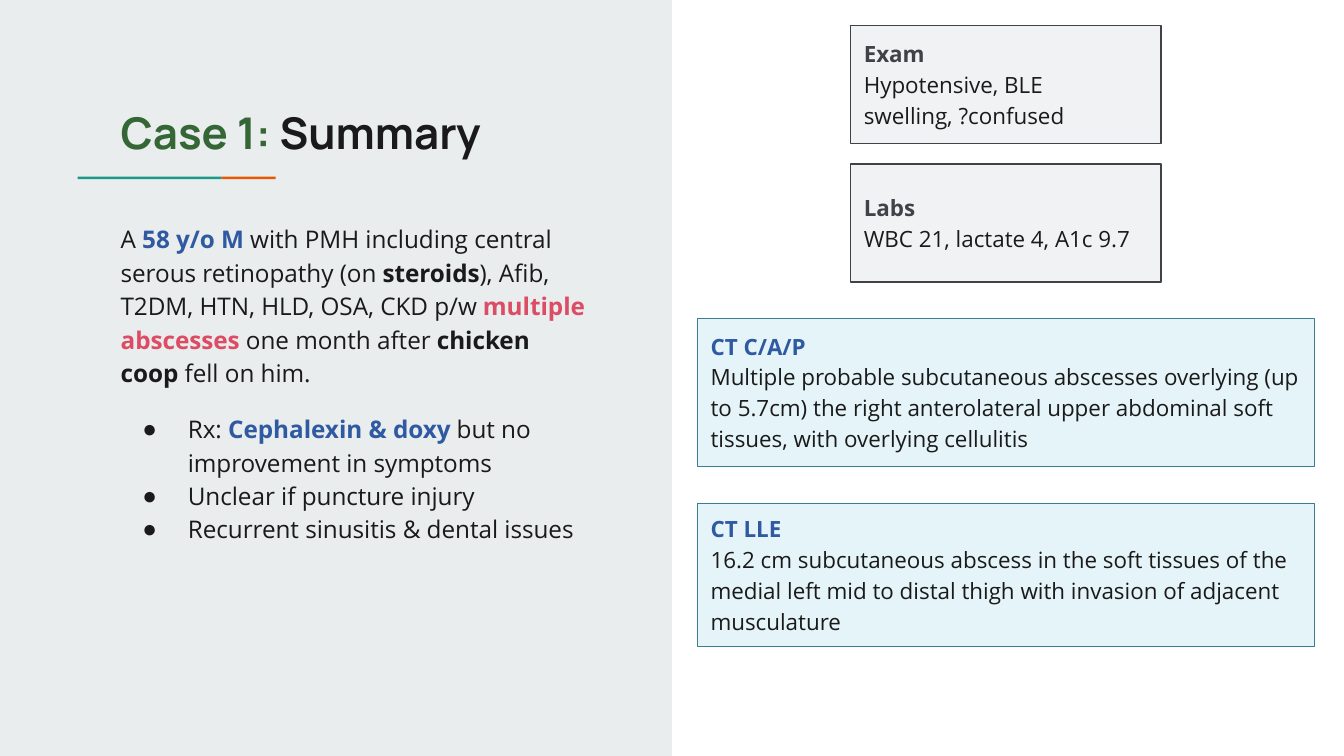
from lxml.etree import SubElement
from pptx import Presentation
from pptx.dml.color import RGBColor
from pptx.enum.shapes import MSO_SHAPE as Geo
from pptx.enum.text import MSO_ANCHOR as Anchor, MSO_AUTO_SIZE as Fit, PP_ALIGN as Align
from pptx.oxml.ns import qn
from pptx.util import Cm, Pt

INK, BLUE, GRAY = "1A1A1A", "2F5AA2", "404247"
GREEN, RED = "356635", "DC4C64"
PAD = Cm(0.25)

STORY = [
    ("A ",), ("58 y/o M", BLUE),
    (" with PMH including central serous retinopathy (on ",),
    ("steroids", INK), ("), Afib, T2DM, HTN, HLD, OSA, CKD p/w ",),
    ("multiple abscesses ", RED), ("one month after ",),
    ("chicken coop ", INK), ("fell on him.",),
]
POINTS = [
    [("Rx: ",), ("Cephalexin & doxy", BLUE), (" but no improvement in symptoms",)],
    [("Unclear if puncture injury",)],
    [("Recurrent sinusitis & dental issues",)],
]
FINDS = [
    ("Exam", "Hypotensive, BLE swelling, ?confused"),
    ("Labs", "WBC 21, lactate 4, A1c 9.7"),
]
SCANS = [
    ("CT C/A/P", "Multiple probable subcutaneous abscesses overlying (up to 5.7cm) "
     "the right anterolateral upper abdominal soft tissues, with overlying cellulitis", 2.8),
    ("CT LLE", "16.2 cm subcutaneous abscess in the soft tissues of the medial left mid "
     "to distal thigh with invasion of adjacent musculature", 2.7),
]


def rgb(code):
    return RGBColor.from_string(code)


def place(shape, x, y, w, h):
    shape.left, shape.top, shape.width, shape.height = Cm(x), Cm(y), Cm(w), Cm(h)


def frame(shape, anchor):
    """Set up the shape's text frame and return it."""
    tf = shape.text_frame
    tf.margin_left = tf.margin_right = tf.margin_top = tf.margin_bottom = PAD
    tf.word_wrap, tf.auto_size, tf.vertical_anchor = True, Fit.NONE, anchor
    return tf


def style(para, name, size, color=INK, bold=False):
    font = para.font
    font.name, font.size, font.bold = name, Pt(size), bold
    font.color.rgb = rgb(color)


def write(para, parts):
    """Add runs; a part that names a colour is bold in it."""
    for text, *color in parts:
        run = para.add_run()
        run.text = text
        if color:
            run.font.bold = True
            run.font.color.rgb = rgb(color[0])


def bullet(para, on):
    props = para._p.get_or_add_pPr()
    props.set("marL", str(Cm(1.27) if on else 0))
    props.set("indent", str(Cm(-0.86) if on else 0))
    if on:
        tint = SubElement(props, qn("a:buClr"))
        SubElement(tint, qn("a:srgbClr"), val=INK)
        SubElement(props, qn("a:buChar"), char="●")
    else:
        SubElement(props, qn("a:buNone"))


def block(slide, x, y, w, h, fill, line=None):
    box = slide.shapes.add_shape(Geo.RECTANGLE, Cm(x), Cm(y), Cm(w), Cm(h))
    box.shadow.inherit = False
    box.fill.solid()
    box.fill.fore_color.rgb = rgb(fill)
    if line:
        box.line.color.rgb = rgb(line)
        box.line.width = Pt(0.75)
    else:
        box.line.fill.background()
    return box


def card(slide, x, y, w, h, head, text, fill, line, color):
    tf = frame(block(slide, x, y, w, h, fill, line), Anchor.MIDDLE)
    top, body = tf.paragraphs[0], tf.add_paragraph()
    top.text, body.text = head, text
    top.alignment = body.alignment = Align.LEFT
    body.line_spacing = 1.15
    style(top, "Open Sans", 12, color, True)
    style(body, "Open Sans", 12)


def backdrop(slide, x, y, w, h):
    """Tinted panel with the two-colour rule under the title."""
    panel = block(slide, x, y, w, h, "E9EDEE")
    rules = [block(slide, x + 1.47, y + 3.34, 2.72, 0.05, "1A9988"),
             block(slide, x + 4.19, y + 3.34, 1.02, 0.05, "EB5600")]
    tree = slide.shapes._spTree
    for spot, shape in enumerate([panel] + rules, 2):
        tree.insert(spot, shape._element)


def summary(slide, x, y, w, h):
    backdrop(slide, x, y, w, h)
    title, body = slide.placeholders
    place(title, x + 2.03, y + 1.75, w - 2.24, 1.5)
    para = frame(title, Anchor.TOP).paragraphs[0]
    para.alignment = Align.LEFT
    style(para, "Manrope", 23.4, bold=True)
    write(para, [("Case 1:", GREEN), (" Summary",)])

    place(body, x + 2.03, y + 3.91, w - 3.33, 7.26)
    tf = frame(body, Anchor.TOP)
    for i, parts in enumerate([STORY] + POINTS):
        para = tf.add_paragraph() if i else tf.paragraphs[0]
        bullet(para, i > 0)
        para.line_spacing = 1.15
        para.space_before = Pt(12 if i == 1 else 0)
        style(para, "Open Sans", 13)
        write(para, parts)


def results(slide, x, y, w):
    """Stack narrow finding cards, centred, over full-width scan cards."""
    slim, tall = 5.87, 2.23
    for i, (head, text) in enumerate(FINDS):
        card(slide, x + (w - slim) / 2, y + i * 2.62, slim, tall,
             head, text, "F1F2F3", GRAY, GRAY)
    top = y + 5.54
    for head, text, high in SCANS:
        card(slide, x, top, w, high, head, text, "E5F4F8", "3B7E94", BLUE)
        top += high + 0.7


def main():
    deck = Presentation()
    deck.slide_width, deck.slide_height = Cm(25.4), Cm(14.29)
    slide = deck.slides.add_slide(deck.slide_layouts[1])
    summary(slide, 0, 0, 12.7, 14.29)
    results(slide, 13.18, 0.48, 11.66)
    deck.save("out.pptx")


if __name__ == "__main__":
    main()
